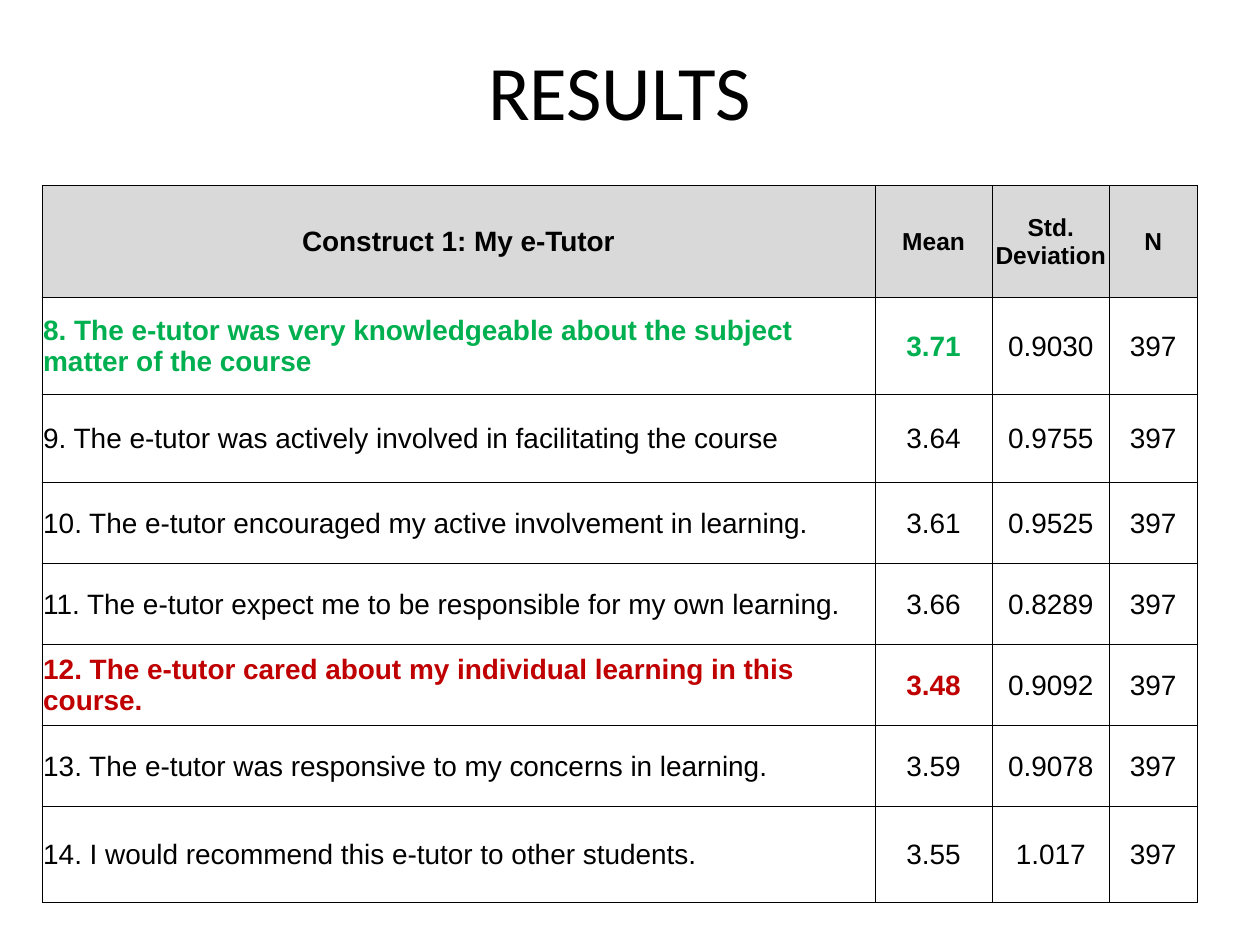
import pptx
import pptx.util
import pptx.dml.color
import pptx.enum.text
import pptx.oxml.ns
import lxml.etree

Pt = pptx.util.Pt
ALIGN = pptx.enum.text.PP_ALIGN
MIDDLE = pptx.enum.text.MSO_ANCHOR.MIDDLE

COLORS = {
    "text": "000000",
    "header": "D9D9D9",
    "highest": "00B050",
    "lowest": "C00000",
}
HEADINGS = ("Construct 1: My e-Tutor", "Mean", "Std. Deviation", "N")
RESULTS = [
    ("8. The e-tutor was very knowledgeable about the subject matter of the course", "3.71", "0.9030", "397"),
    ("9. The e-tutor was actively involved in facilitating the course", "3.64", "0.9755", "397"),
    ("10. The e-tutor encouraged my active involvement in learning.", "3.61", "0.9525", "397"),
    ("11. The e-tutor expect me to be responsible for my own learning.", "3.66", "0.8289", "397"),
    ("12. The e-tutor cared about my individual learning in this course.", "3.48", "0.9092", "397"),
    ("13. The e-tutor was responsive to my concerns in learning.", "3.59", "0.9078", "397"),
    ("14. I would recommend this e-tutor to other students.", "3.55", "1.017", "397"),
]
HIGHLIGHTS = {1: "highest", 5: "lowest"}
COLUMN_WIDTHS = (476, 67, 67, 50)
ROW_HEIGHTS = (64, 55.4, 50.4, 46.3, 46.3, 46.3, 46.3, 55)


def rgb(name):
    return pptx.dml.color.RGBColor.from_string(COLORS[name])


def style_text(paragraph, font_name, size, color, bold, align):
    paragraph.alignment = align
    font = paragraph.font
    font.name, font.size, font.bold = font_name, Pt(size), bold
    font.color.rgb = rgb(color)


def add_borders(cell):
    qn = pptx.oxml.ns.qn
    properties = cell._tc.get_or_add_tcPr()
    for side in ("L", "R", "T", "B"):
        line = lxml.etree.SubElement(properties, qn(f"a:ln{side}"), w=str(Pt(0.5)))
        fill = lxml.etree.SubElement(line, qn("a:solidFill"))
        lxml.etree.SubElement(fill, qn("a:srgbClr"), val=COLORS["text"])


def format_cell(cell, text, row, column):
    is_header = row == 0
    is_highlight = row in HIGHLIGHTS and column < 2
    cell.text = text
    cell.vertical_anchor = MIDDLE
    cell.margin_left = cell.margin_right = cell.margin_top = Pt(0.7)
    cell.margin_bottom = Pt(0)
    add_borders(cell)
    if is_header:
        cell.fill.solid()
        cell.fill.fore_color.rgb = rgb("header")
    else:
        cell.fill.background()
    style_text(
        cell.text_frame.paragraphs[0],
        "Arial",
        14 if is_header and column else 16,
        HIGHLIGHTS[row] if is_highlight else "text",
        is_header or is_highlight,
        ALIGN.CENTER if is_header or column else ALIGN.LEFT,
    )


def main():
    deck = pptx.Presentation()
    deck.slide_width, deck.slide_height = Pt(720), Pt(540)
    slide = deck.slides.add_slide(deck.slide_layouts[5])

    title = slide.shapes.title
    title.left, title.top, title.width, title.height = Pt(48), Pt(18), Pt(612), Pt(66)
    title.text_frame.text = "RESULTS"
    title.text_frame.vertical_anchor = MIDDLE
    style_text(title.text_frame.paragraphs[0], "Calibri", 44, "text", False, ALIGN.CENTER)

    rows = [HEADINGS, *RESULTS]
    scores = slide.shapes.add_table(
        len(rows), len(HEADINGS), Pt(24), Pt(106),
        Pt(sum(COLUMN_WIDTHS)), Pt(sum(ROW_HEIGHTS)),
    ).table
    scores.horz_banding = False
    for column, width in zip(scores.columns, COLUMN_WIDTHS):
        column.width = Pt(width)
    for row, height in zip(scores.rows, ROW_HEIGHTS):
        row.height = Pt(height)
    for r, values in enumerate(rows):
        for c, value in enumerate(values):
            format_cell(scores.cell(r, c), value, r, c)

    deck.save("out.pptx")


if __name__ == "__main__":
    main()
